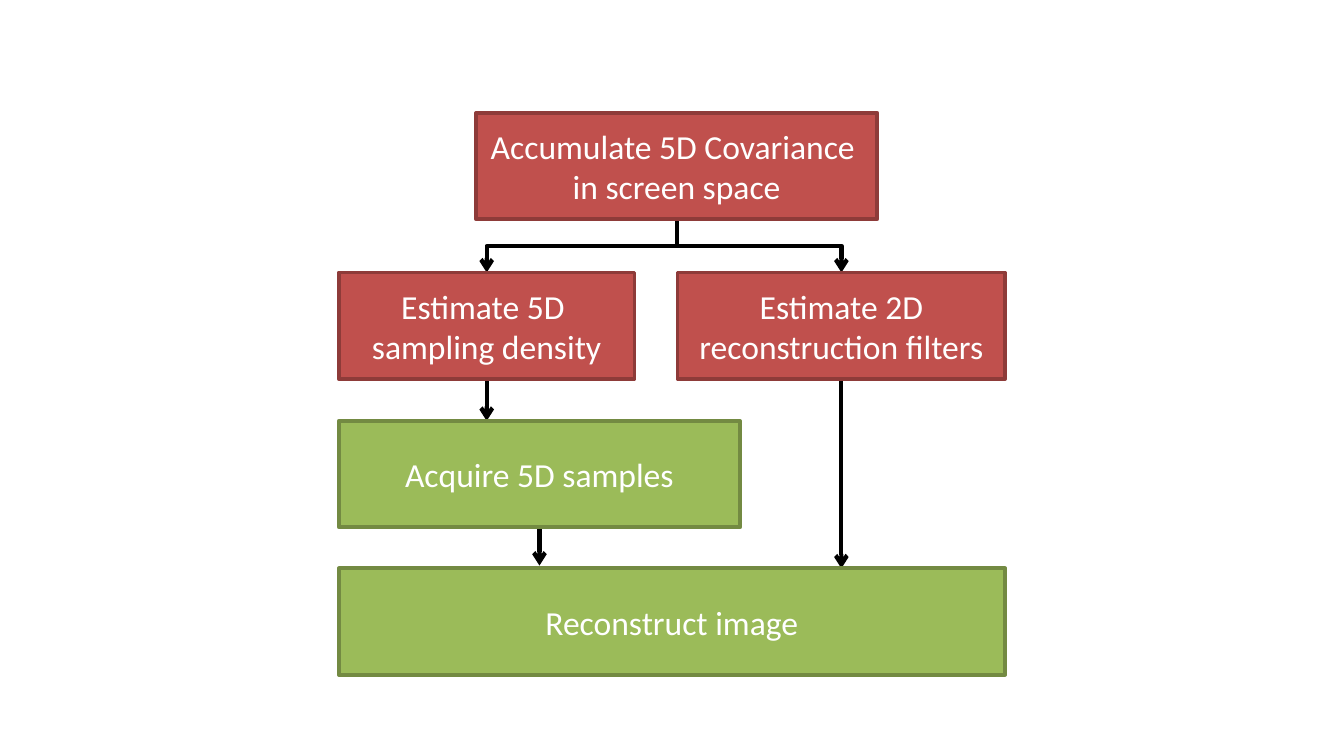
from lxml.etree import SubElement
from pptx import Presentation
from pptx.dml.color import RGBColor
from pptx.enum.shapes import MSO_CONNECTOR as Conn, MSO_SHAPE as Shape
from pptx.enum.text import MSO_ANCHOR as Anchor, PP_ALIGN as Align
from pptx.oxml.ns import qn
from pptx.util import Pt

RED, GREEN = ("C0504D", "8E3B39"), ("9BBB59", "738A42")
LEFT, RIGHT, HIGH = 181.5, 538.5, 57
WIDE = 215
TOP, BOTTOM = 0, 2


def paint(fmt, color):
    fmt.solid()
    fmt.fore_color.rgb = RGBColor.from_string(color)


def write(frame, text, size=18, font="Calibri", color="FFFFFF"):
    frame.text = text
    frame.word_wrap = True
    frame.vertical_anchor = Anchor.MIDDLE
    for para in frame.paragraphs:
        para.alignment = Align.CENTER
        para.font.size = Pt(size)
        para.font.name = font
        paint(para.font.fill, color)


def add_box(slide, text, x, y, width, colors):
    box = slide.shapes.add_shape(Shape.RECTANGLE, Pt(x), Pt(y), Pt(width), Pt(HIGH))
    box.shadow.inherit = False
    fill, edge = colors
    paint(box.fill, fill)
    paint(box.line.fill, edge)
    box.line.width = Pt(2)
    write(box.text_frame, text)
    return box


def add_arrow(slide, kind, start):
    """Add a black arrow from the bottom of a box, behind all boxes."""
    arrow = slide.shapes.add_connector(kind, 0, 0, 0, 0)
    arrow.begin_connect(start, BOTTOM)
    paint(arrow.line.fill, "000000")
    arrow.line.width = Pt(2.25)
    SubElement(arrow.line._get_or_add_ln(), qn("a:tailEnd"), type="arrow")
    SubElement(arrow.element.spPr, qn("a:effectLst"))
    arrow.element.getparent().insert(2, arrow.element)
    return arrow


def drop(slide, start, y):
    """Lead straight down from a box to the height y, in points."""
    arrow = add_arrow(slide, Conn.STRAIGHT, start)
    arrow.end_x, arrow.end_y = arrow.begin_x, Pt(y)


def branch(slide, start, end):
    """Lead down, across and down; the elbow is turned to leave vertically."""
    arrow = add_arrow(slide, Conn.ELBOW, start)
    arrow.end_connect(end, TOP)
    x, y, width, height = arrow.left, arrow.top, arrow.width, arrow.height
    right = arrow.end_x > arrow.begin_x
    arrow.left = x + (width - height) // 2
    arrow.top = y + (height - width) // 2
    arrow.width, arrow.height = height, width
    xfrm = arrow.element.spPr.find(qn("a:xfrm"))
    xfrm.set("rot", str((270 if right else 90) * 60000))
    xfrm.set("flipH", "1" if right else "0")
    xfrm.set("flipV", "0")


def main():
    deck = Presentation()
    deck.slide_width, deck.slide_height = Pt(720), Pt(405)
    slide = deck.slides.add_slide(deck.slide_layouts[6])

    source = add_box(slide, "Accumulate 5D Covariance \nin screen space",
                     255, 60.5, WIDE, RED)
    density = add_box(slide, "Estimate 5D \nsampling density",
                      LEFT, 146, 158.5, RED)
    filters = add_box(slide, "Estimate 2D reconstruction filters",
                      363, 146, RIGHT - 363, RED)
    samples = add_box(slide, "Acquire 5D samples", LEFT, 225.5, WIDE, GREEN)
    add_box(slide, "Reconstruct image", LEFT, 304.5, RIGHT - LEFT, GREEN)

    branch(slide, source, density)
    branch(slide, source, filters)
    drop(slide, density, 225.5)
    drop(slide, filters, 304.5)
    drop(slide, samples, 303)
    deck.save("out.pptx")


if __name__ == "__main__":
    main()
